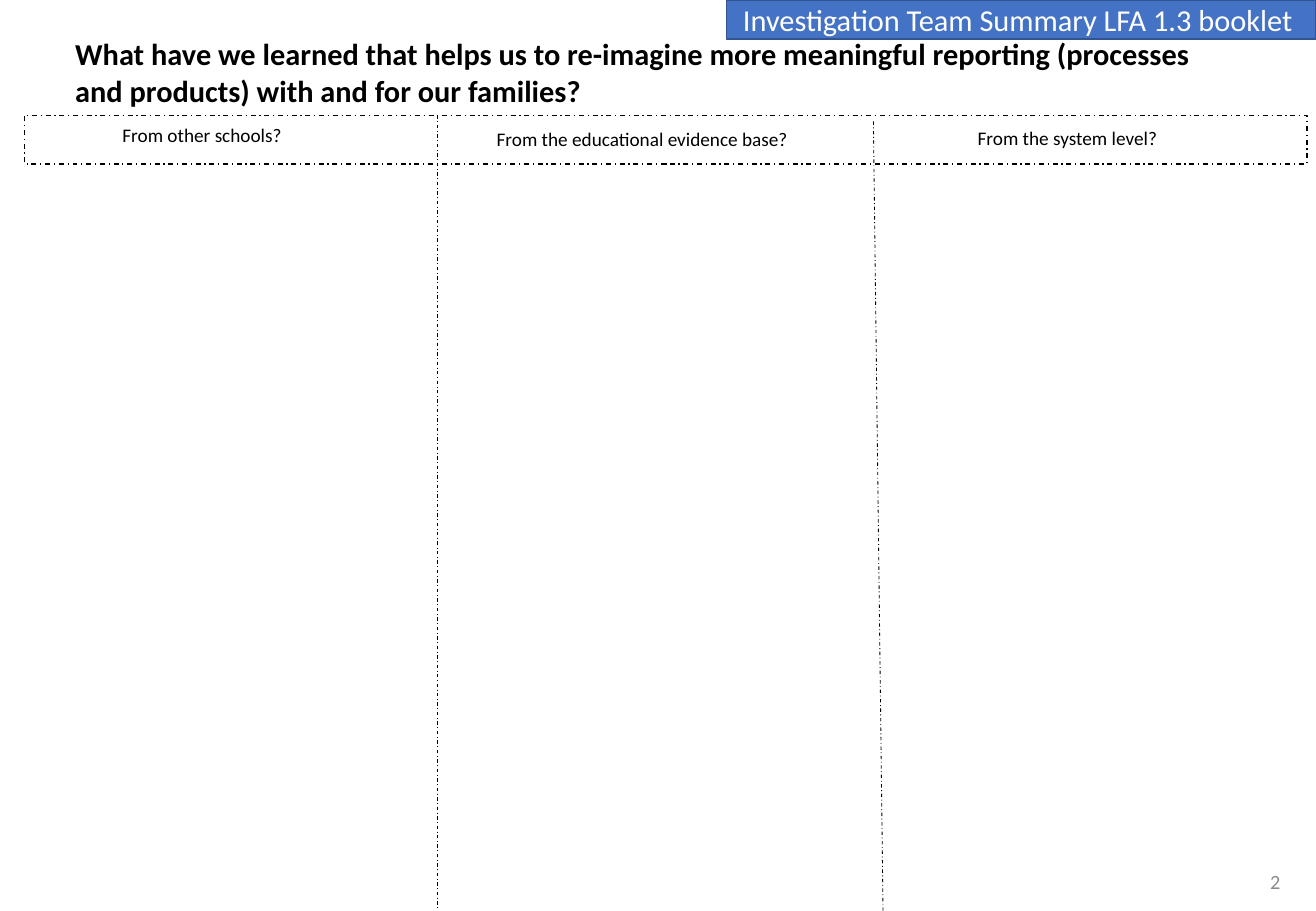
from pptx import Presentation
from pptx.dml.color import RGBColor
from pptx.enum.dml import MSO_LINE
from pptx.enum.shapes import MSO_CONNECTOR, MSO_SHAPE
from pptx.enum.text import MSO_ANCHOR, MSO_AUTO_SIZE, PP_ALIGN
from pptx.oxml.ns import qn
from pptx.util import Pt

COLOURS = {"ink": "000000", "grey": "8C8C8C", "banner": "4472C4",
           "banner_edge": "325491", "white": "FFFFFF"}
PAGE_WIDTH, PAGE_HEIGHT = 780, 540


def colour(name):
    """Return the named colour."""
    return RGBColor.from_string(COLOURS[name])


def write(shape, text, size, ink="ink", bold=False,
          align=PP_ALIGN.LEFT, anchor=MSO_ANCHOR.TOP):
    """Put one formatted paragraph in a shape."""
    frame = shape.text_frame
    frame_format = {"word_wrap": True, "auto_size": MSO_AUTO_SIZE.NONE,
                    "vertical_anchor": anchor,
                    "margin_left": Pt(7.2), "margin_right": Pt(7.2),
                    "margin_top": Pt(3.6), "margin_bottom": Pt(3.6)}
    for name, value in frame_format.items():
        setattr(frame, name, value)
    para = frame.paragraphs[0]
    para.alignment = align
    span = para.add_run()
    span.text = text
    for name, value in {"name": "Calibri", "size": Pt(size), "bold": bold}.items():
        setattr(span.font, name, value)
    span.font.color.rgb = colour(ink)


def style_line(line, ink, width, dash=None):
    """Set the colour, width and dash of a line."""
    line.color.rgb = colour(ink)
    for name, value in {"width": Pt(width), "dash_style": dash}.items():
        setattr(line, name, value)


def add_title(page, box):
    """Move the title placeholder to its box and write the question."""
    title = page.shapes.title
    for name, value in zip(("left", "top", "width", "height"), box):
        setattr(title, name, Pt(value))
    write(title, "What have we learned that helps us to re-imagine more meaningful "
          "reporting (processes and products) with and for our families?", 18, bold=True)


def add_rectangle(page, box):
    """Add a plain rectangle without shadow."""
    rectangle = page.shapes.add_shape(MSO_SHAPE.RECTANGLE, *map(Pt, box))
    rectangle.shadow.inherit = False
    return rectangle


def add_columns(page, box):
    """Draw the heading band, the column dividers and the headings."""
    left, top, width, height = box
    band = add_rectangle(page, box)
    band.fill.background()
    style_line(band.line, "ink", 0.75, MSO_LINE.DASH_DOT)

    dividers = [(244.8, 0, 244.8), (503.3, 3.6, 509)]
    for start, drop, end in dividers:
        divider = page.shapes.add_connector(
            MSO_CONNECTOR.STRAIGHT, Pt(left + start), Pt(top + drop),
            Pt(left + end), Pt(PAGE_HEIGHT))
        style_line(divider.line, "ink", 0.5, MSO_LINE.DASH_DOT)
        properties = divider._element.spPr
        properties.append(properties.makeelement(qn("a:effectLst"), {}))

    headings = [("From other schools?", 51.1, 1.4, 168.5),
                ("From the educational evidence base?", 272.9, 3.6, 193.7),
                ("From the system level?", 558, 2.9, 193.7)]
    for text, shift, drop, span_width in headings:
        heading = page.shapes.add_textbox(
            Pt(left + shift), Pt(top + drop), Pt(span_width), Pt(20.9))
        write(heading, text, 11.4)


def add_page_number(page, box):
    """Write the page number at the bottom right."""
    number = page.shapes.add_textbox(*map(Pt, box))
    write(number, "2", 12, "grey", align=PP_ALIGN.RIGHT, anchor=MSO_ANCHOR.MIDDLE)


def add_banner(page, box):
    """Draw the booklet banner at the top right."""
    banner = add_rectangle(page, box)
    banner.fill.solid()
    banner.fill.fore_color.rgb = colour("banner")
    style_line(banner.line, "banner_edge", 1)
    write(banner, "Investigation Team Summary LFA 1.3 booklet ", 18, "white",
          align=PP_ALIGN.CENTER, anchor=MSO_ANCHOR.MIDDLE)


def main():
    """Build the summary page and save the deck."""
    deck = Presentation()
    deck.slide_width, deck.slide_height = Pt(PAGE_WIDTH), Pt(PAGE_HEIGHT)
    page = deck.slides.add_slide(deck.slide_layouts.get_by_name("Title Only"))
    add_title(page, (37.4, 17.3, 689, 51.1))
    add_columns(page, (14.4, 68.4, 760.3, 28.8))
    add_page_number(page, (590.4, 508.3, 175.7, 28.8))
    add_banner(page, (430.6, 0, 349.4, 23))
    deck.save("out.pptx")


if __name__ == "__main__":
    main()
